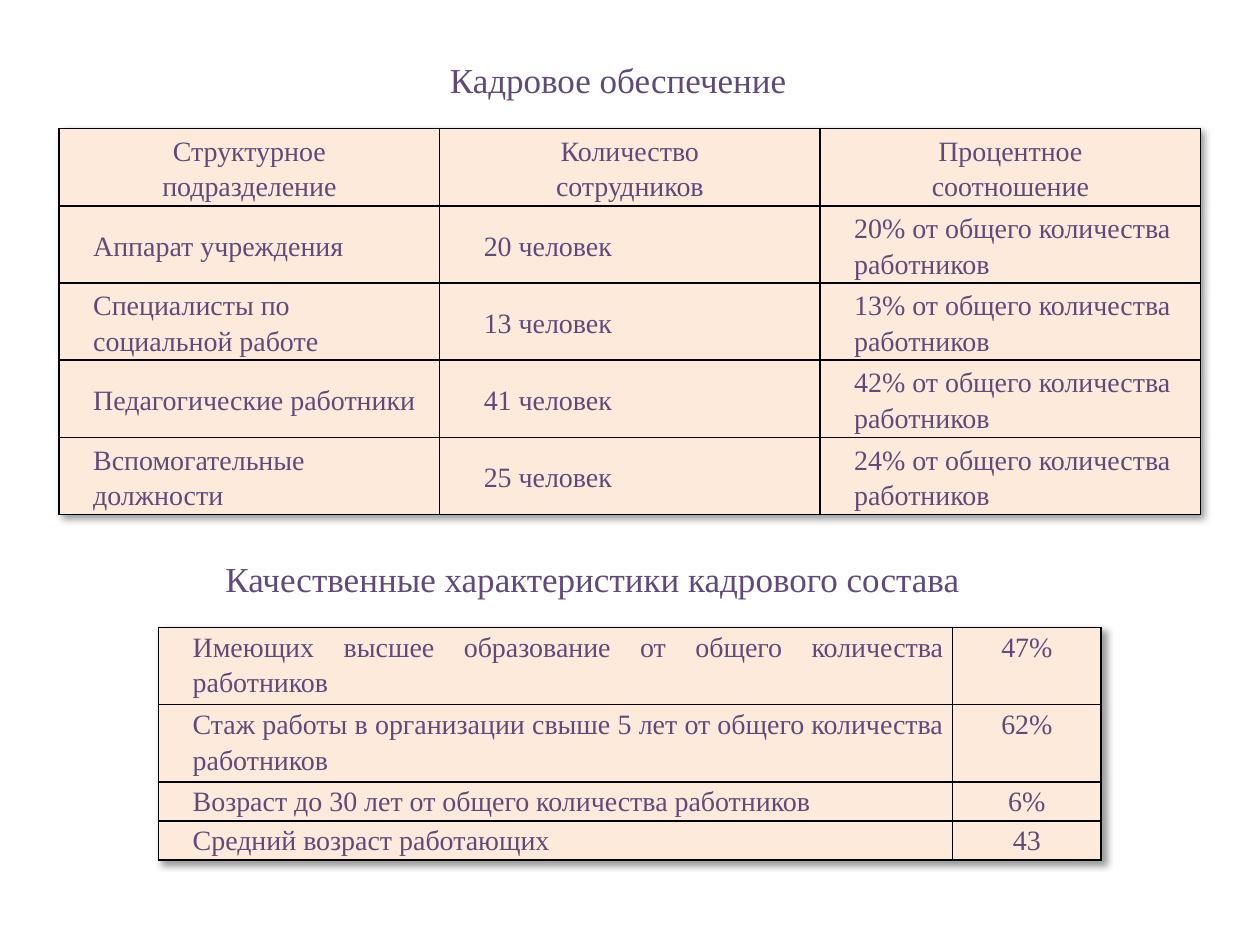
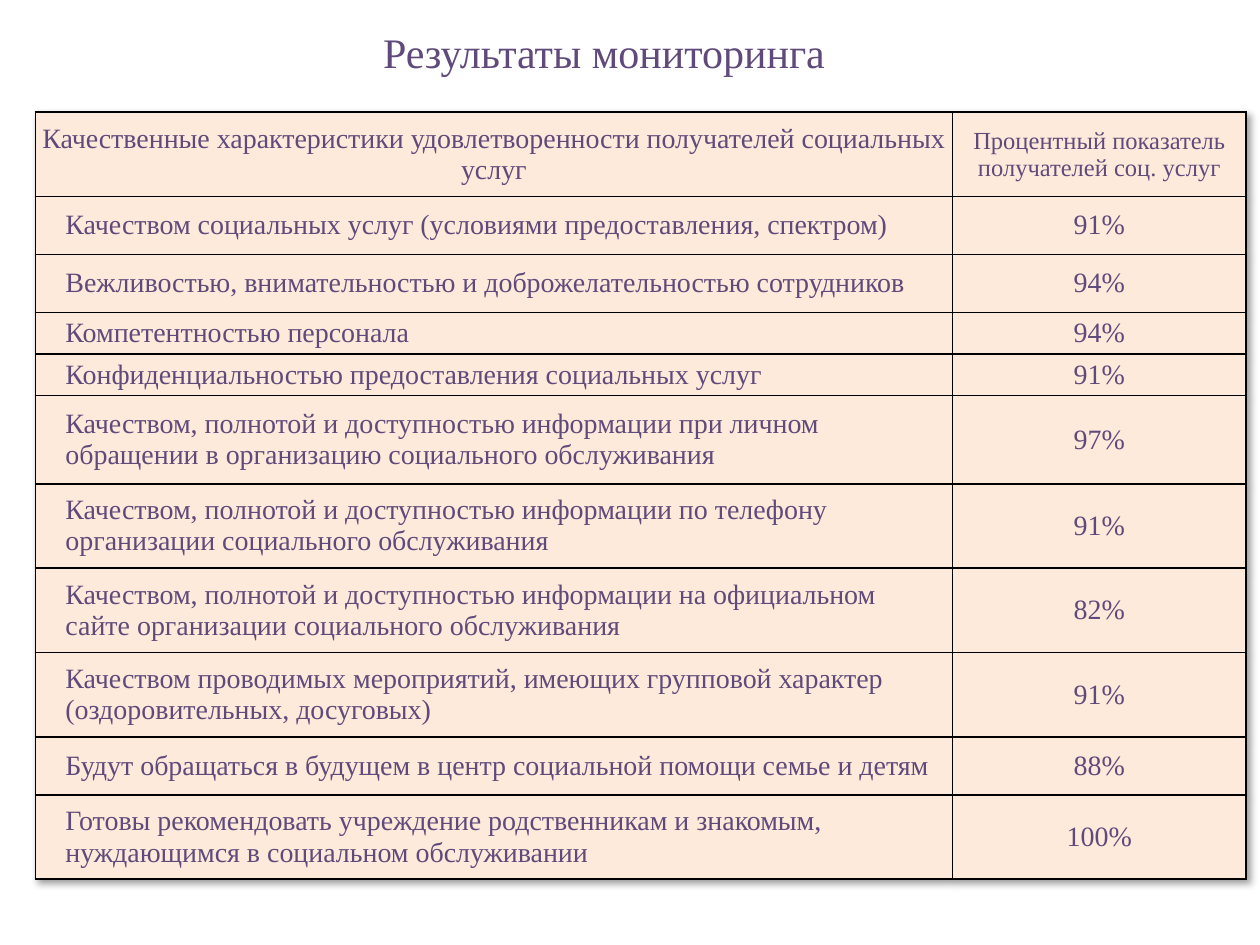
from lxml import etree
from pptx import Presentation
from pptx.dml.color import RGBColor
from pptx.enum.text import MSO_ANCHOR, MSO_AUTO_SIZE, PP_ALIGN
from pptx.oxml import parse_xml
from pptx.oxml.ns import nsdecls, qn
from pptx.util import Inches, Pt

LEFT, CENTER, JUSTIFY = PP_ALIGN.LEFT, PP_ALIGN.CENTER, PP_ALIGN.JUSTIFY
TOP, MIDDLE = MSO_ANCHOR.TOP, MSO_ANCHOR.MIDDLE
GROW = MSO_AUTO_SIZE.SHAPE_TO_FIT_TEXT
TITLE_ONLY = 5

COLORS = {"text": "604A7B", "cell": "FDEADA", "border": "000000"}
FONT = "Times New Roman"
BODY_SIZE = 16
INDENT = 0.2

# Column styles: (alignment, left indent)
INDENTED = (LEFT, INDENT)
WIDE_INDENTED = (LEFT, 0.28)
JUSTIFIED = (JUSTIFY, INDENT)
CENTERED = (CENTER, 0)

STAFF_HEADER = ("Структурное\nподразделение", "Количество\nсотрудников", "Процентное\nсоотношение")
STAFF = [
    ("Аппарат учреждения", 20, 20),
    ("Специалисты по социальной работе", 13, 13),
    ("Педагогические работники", 41, 42),
    ("Вспомогательные должности", 25, 24),
]
STAFF_ROWS = [STAFF_HEADER] + [
    (unit, f"{people} человек", f"{share}% от общего количества работников")
    for unit, people, share in STAFF
]

QUALITY_ROWS = [
    ("Имеющих высшее образование от общего количества работников", "47%"),
    ("Стаж работы в организации свыше 5 лет от общего количества работников", "62%"),
    ("Возраст до 30 лет от общего количества работников", "6%"),
    ("Средний возраст работающих", "43"),
]

MONITORING_ROWS = [
    ("Качественные характеристики удовлетворенности получателей социальных услуг",
     "Процентный показатель получателей соц. услуг"),
    ("Качеством социальных услуг (условиями предоставления, спектром)", "91%"),
    ("Вежливостью, внимательностью и доброжелательностью сотрудников", "94%"),
    ("Компетентностью персонала", "94%"),
    ("Конфиденциальностью предоставления социальных услуг", "91%"),
    ("Качеством, полнотой и доступностью информации при личном обращении "
     "в организацию социального обслуживания", "97%"),
    ("Качеством, полнотой и доступностью информации по телефону "
     "организации социального обслуживания", "91%"),
    ("Качеством, полнотой и доступностью информации на официальном сайте "
     "организации социального обслуживания", "82%"),
    ("Качеством проводимых мероприятий, имеющих групповой характер "
     "(оздоровительных, досуговых)", "91%"),
    ("Будут обращаться в будущем в центр социальной помощи семье и детям", "88%"),
    ("Готовы рекомендовать учреждение родственникам и знакомым, "
     "нуждающимся в социальном обслуживании", "100%"),
]
SINGLE, SPACED, DOUBLE = 0.33, 0.46, 0.67
MONITORING_HEIGHTS = [DOUBLE, SPACED, SPACED, SINGLE, SINGLE, 0.7,
                      DOUBLE, DOUBLE, DOUBLE, SPACED, DOUBLE]

SLIDES = [
    {
        "title": ("Кадровое обеспечение", 20, (3.47, 0.41, 3.05, 0.44)),
        "headings": [("Качественные характеристики кадрового состава", 20,
                      (1.69, 4.37, 6.61, 0.44))],
        "tables": [
            {"rows": STAFF_ROWS, "corner": (0.47, 1.02), "widths": [3.02] * 3,
             "heights": [0.57] * 5, "styles": (INDENTED, WIDE_INDENTED, INDENTED),
             "header_sizes": [BODY_SIZE] * 3, "inset": 0.07, "spacing": 1.15,
             "anchor": MIDDLE},
            {"rows": QUALITY_ROWS, "corner": (1.26, 4.98), "widths": [6.3, 1.18],
             "heights": [0.61, 0.61, 0.31, 0.31], "styles": (JUSTIFIED, CENTERED),
             "header_sizes": None, "inset": 0.07, "spacing": 1.15, "anchor": TOP},
        ],
    },
    {
        "title": ("Результаты мониторинга", 24, (2.94, 0.16, 4.12, 0.5)),
        "headings": [],
        "tables": [
            {"rows": MONITORING_ROWS, "corner": (0.28, 0.89), "widths": [7.28, 2.33],
             "heights": MONITORING_HEIGHTS, "styles": (INDENTED, CENTERED),
             "header_sizes": [BODY_SIZE, 14], "inset": 0.04, "spacing": 1,
             "anchor": MIDDLE},
        ],
    },
]


def add_span(para, text, size):
    span = para.add_run()
    span.text = text
    span.font.name = FONT
    span.font.size = Pt(size)
    span.font.color.rgb = RGBColor.from_string(COLORS["text"])


def write_heading(box, text, size, place):
    box.left, box.top, box.width, box.height = (Inches(length) for length in place)
    frame = box.text_frame
    frame.word_wrap = True
    frame.auto_size = GROW
    frame.vertical_anchor = MIDDLE
    para = frame.paragraphs[0]
    para.alignment = LEFT
    add_span(para, text, size)


def add_borders(cell):
    properties = cell._tc.get_or_add_tcPr()
    for side in ("lnL", "lnR", "lnT", "lnB"):
        properties.append(parse_xml(
            f'<a:{side} {nsdecls("a")} w="{Pt(1)}"><a:solidFill>'
            f'<a:srgbClr val="{COLORS["border"]}"/></a:solidFill></a:{side}>'))


def add_table_shadow(table):
    effects = etree.Element(qn("a:effectLst"))
    shadow = etree.SubElement(effects, qn("a:outerShdw"), blurRad=str(Pt(4)),
                              dist=str(Pt(3)), dir="2700000", algn="tl", rotWithShape="0")
    color = etree.SubElement(shadow, qn("a:prstClr"), val="black")
    etree.SubElement(color, qn("a:alpha"), val="40000")
    table._tbl.tblPr.insert(0, effects)


def write_cell(cell, text, size, style, layout):
    alignment, indent = style
    cell.margin_left = cell.margin_right = Inches(layout["inset"])
    cell.margin_top = cell.margin_bottom = 0
    cell.vertical_anchor = layout["anchor"]
    add_borders(cell)
    cell.fill.solid()
    cell.fill.fore_color.rgb = RGBColor.from_string(COLORS["cell"])
    frame = cell.text_frame
    for number, line in enumerate(text.split("\n")):
        para = frame.add_paragraph() if number else frame.paragraphs[0]
        para.alignment = alignment
        para.line_spacing = layout["spacing"]
        if indent:
            properties = para._p.get_or_add_pPr()
            properties.set("marL", str(Inches(indent)))
            properties.set("indent", "0")
        add_span(para, line, size)


def add_grid(page, layout):
    rows, widths, heights = layout["rows"], layout["widths"], layout["heights"]
    left, top = layout["corner"]
    table = page.shapes.add_table(
        len(rows), len(widths), Inches(left), Inches(top),
        Inches(sum(widths)), Inches(sum(heights))).table
    table.first_row = table.horz_banding = False
    add_table_shadow(table)
    for column, width in zip(table.columns, widths):
        column.width = Inches(width)
    for row, height in zip(table.rows, heights):
        row.height = Inches(height)
    for row_number, texts in enumerate(rows):
        is_header = row_number == 0 and layout["header_sizes"]
        for column_number, text in enumerate(texts):
            size = layout["header_sizes"][column_number] if is_header else BODY_SIZE
            style = CENTERED if is_header else layout["styles"][column_number]
            write_cell(table.cell(row_number, column_number), text, size, style, layout)


def main():
    deck = Presentation()
    deck.slide_width, deck.slide_height = Inches(10), Inches(7.5)
    for content in SLIDES:
        page = deck.slides.add_slide(deck.slide_layouts[TITLE_ONLY])
        write_heading(page.shapes.title, *content["title"])
        for heading in content["headings"]:
            write_heading(page.shapes.add_textbox(0, 0, 0, 0), *heading)
        for layout in content["tables"]:
            add_grid(page, layout)
    deck.save("out.pptx")


if __name__ == "__main__":
    main()
